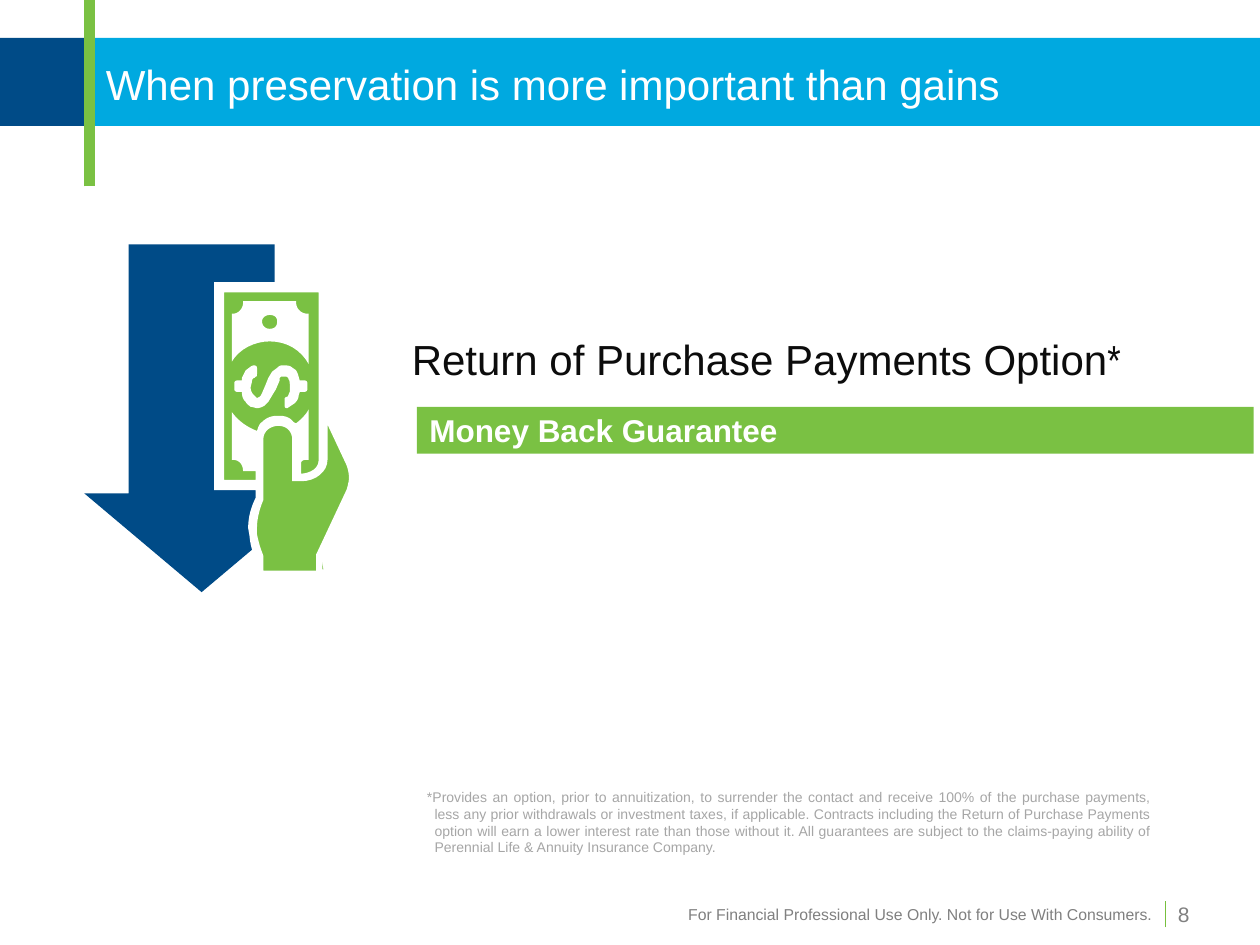
from dataclasses import dataclass
from typing import NamedTuple

from lxml import etree
from pptx import Presentation
from pptx.dml.color import RGBColor
from pptx.enum.shapes import MSO_CONNECTOR, MSO_SHAPE
from pptx.enum.text import MSO_ANCHOR, MSO_AUTO_SIZE, PP_ALIGN
from pptx.oxml.ns import qn
from pptx.util import Inches, Pt

RECT, ROUNDED, ARROW = MSO_SHAPE.RECTANGLE, MSO_SHAPE.ROUNDED_RECTANGLE, MSO_SHAPE.RIGHT_ARROW
STRAIGHT = MSO_CONNECTOR.STRAIGHT
TOP, MIDDLE, BOTTOM = MSO_ANCHOR.TOP, MSO_ANCHOR.MIDDLE, MSO_ANCHOR.BOTTOM
LEFT, RIGHT, JUSTIFY = PP_ALIGN.LEFT, PP_ALIGN.RIGHT, PP_ALIGN.JUSTIFY
NO_AUTOFIT = MSO_AUTO_SIZE.NONE
CURVE_STEPS = 8


@dataclass(frozen=True)
class Theme:
    sky: str = "00A9E0"
    navy: str = "004B87"
    green: str = "7AC143"
    divider: str = "77C03E"
    white: str = "FFFFFF"
    ink: str = "0C0C0C"
    grey: str = "808080"
    pale: str = "A6A6A6"
    font: str = "Arial"
    narrow: str = "Arial Narrow"
    heading: int = 24
    label: int = 18
    number: int = 12
    footer: int = 9
    note: int = 8


class Box(NamedTuple):
    left: float
    top: float
    width: float
    height: float


class Style(NamedTuple):
    size: int
    color: str
    anchor: MSO_ANCHOR = MIDDLE
    align: PP_ALIGN = LEFT
    bold: bool = False
    wrap: bool = True
    bottom: float = 0.05
    hanging: float = 0


class Rule(NamedTuple):
    x: float
    top: float
    bottom: float
    color: str
    weight: float


class Outline(NamedTuple):
    """Contours in hundredths of an inch: pairs are corners, sextets are Bezier curves."""
    color: str
    contours: list


THEME = Theme()

HAND_AND_BILL = Outline(THEME.green, [[
    (201, 229), (172, 228), (175, 386), (203, 385), (207, 393), (200, 412), (205, 440),
    (207, 449), (209, 463), (258, 459), (255, 443), (279, 383), (278, 371), (255, 326), (254, 228)]])

BILL_TOP = Outline(THEME.white, [
    [(214, 271), (228, 271, 239, 278, 245, 289), (245, 249), (244, 249),
     (239, 249, 235, 245, 235, 240), (235, 239), (193, 239), (193, 240),
     (193, 245, 189, 249, 185, 249), (184, 249), (184, 287), (190, 277, 202, 271, 214, 271)],
    [(214, 250), (218, 250, 220, 252, 220, 255), (220, 259, 218, 261, 214, 261),
     (211, 261, 208, 259, 208, 255), (208, 252, 211, 250, 214, 250)]])

DOLLAR = Outline(THEME.white, [[
    (242, 302), (238, 302), (237, 300, 237, 297, 235, 294), (234, 293, 232, 292, 231, 291),
    (229, 290, 227, 290, 225, 290), (223, 290, 222, 290, 220, 292), (216, 295), (213, 300),
    (211, 305), (208, 312), (207, 314), (206, 315), (204, 316), (203, 315), (201, 313),
    (200, 312, 199, 310, 199, 308), (199, 307), (200, 303), (200, 301, 201, 300, 202, 300),
    (203, 299), (204, 299, 204, 298, 204, 296), (204, 292), (204, 291, 203, 290, 202, 290),
    (202, 290, 200, 290, 199, 291), (195, 294), (192, 300), (192, 302), (188, 302),
    (187, 302, 186, 303, 186, 304), (186, 309), (186, 310, 187, 311, 188, 311), (192, 311),
    (192, 315, 193, 317, 195, 319), (196, 321, 198, 322, 199, 323),
    (201, 323, 203, 324, 204, 324), (206, 324, 208, 323, 210, 322), (213, 319), (216, 314),
    (219, 309), (222, 302), (222, 300), (223, 299), (225, 299), (227, 299),
    (228, 299, 229, 300, 229, 301), (230, 302, 230, 304, 230, 306), (230, 307), (230, 311),
    (229, 313, 229, 314, 228, 315), (227, 315), (226, 316), (226, 318), (226, 322),
    (226, 323, 226, 324, 228, 324), (231, 322), (234, 320), (236, 318, 237, 316, 237, 314),
    (238, 311), (242, 311), (243, 311, 244, 310, 244, 309), (244, 304),
    (244, 303, 243, 302, 242, 302)]])

WHITE_FRAME = Outline(THEME.white, [
    [(281, 391), (283, 388, 283, 383, 283, 379), (283, 372, 281, 367, 281, 366), (260, 321),
     (260, 224), (170, 224), (170, 389), (203, 389), (203, 395), (199, 403, 197, 411, 197, 419),
     (198, 425), (199, 436, 202, 442, 204, 445), (204, 452), (199, 452), (197, 454), (197, 468),
     (199, 470), (261, 470), (264, 468), (264, 454), (261, 452), (256, 452), (256, 444)],
    [(185, 365), (190, 365, 193, 369, 193, 374), (203, 374), (203, 381), (178, 381), (178, 232),
     (253, 232), (253, 365), (253, 375, 240, 376, 239, 376), (239, 367),
     (240, 365, 242, 365, 244, 365), (245, 365), (245, 325), (243, 329, 239, 333, 235, 336),
     (233, 335), (230, 331, 226, 330, 221, 330), (216, 330, 212, 331, 208, 335),
     (206, 336, 205, 339, 204, 342), (196, 339, 189, 334, 184, 327), (184, 365)],
    [(251, 440), (251, 453), (209, 453), (209, 441), (208, 438, 206, 434, 204, 424),
     (204, 419), (204, 412, 206, 404, 209, 397), (209, 349), (209, 342, 215, 338, 221, 338),
     (227, 338, 232, 342, 232, 349), (232, 382), (239, 382), (251, 382, 260, 374, 260, 365),
     (260, 337), (275, 369), (275, 369, 277, 374, 277, 379), (277, 382, 276, 386, 275, 389)]])


def flatten(contour: list) -> list:
    """Turn corners and curves into points in EMU."""
    points = [contour[0]]
    for node in contour[1:]:
        if len(node) == 2:
            points.append(node)
            continue
        controls = (points[-1], node[:2], node[2:4], node[4:])
        for step in range(1, CURVE_STEPS + 1):
            t = step / CURVE_STEPS
            weights = ((1 - t) ** 3, 3 * t * (1 - t) ** 2, 3 * t * t * (1 - t), t ** 3)
            points.append(tuple(sum(w * c[axis] for w, c in zip(weights, controls))
                                for axis in (0, 1)))
    return [(x * Inches(0.01), y * Inches(0.01)) for x, y in points]


def paint(shape, color: str | None) -> None:
    """Give a shape a flat fill, or none, without line and shadow."""
    shape.shadow.inherit = False
    shape.line.fill.background()
    if color:
        shape.fill.solid()
        shape.fill.fore_color.rgb = RGBColor.from_string(color)
    else:
        shape.fill.background()


def add_block(slide, kind: MSO_SHAPE, box: Box, color: str | None = None):
    """Add a flat preset shape."""
    block = slide.shapes.add_shape(kind, *map(Inches, box))
    paint(block, color)
    return block


def add_outline(slide, outline: Outline) -> None:
    """Add a freeform whose later contours are cut out of the first."""
    first, *holes = map(flatten, outline.contours)
    builder = slide.shapes.build_freeform(*first[0], scale=1.0)
    builder.add_line_segments(first[1:], close=True)
    for hole in holes:
        builder.move_to(*hole[0])
        builder.add_line_segments(hole[1:], close=True)
    paint(builder.convert_to_shape(), outline.color)


def add_rule(slide, rule: Rule) -> None:
    """Add a vertical line."""
    line = slide.shapes.add_connector(STRAIGHT, Inches(rule.x), Inches(rule.bottom),
                                      Inches(rule.x), Inches(rule.top))
    line.line.color.rgb = RGBColor.from_string(rule.color)
    line.line.width = Pt(rule.weight)
    etree.SubElement(line._element.spPr, qn("a:effectLst"))


def write(shape, text: str, style: Style):
    """Set one styled paragraph in a shape."""
    frame = shape.text_frame
    frame.auto_size, frame.word_wrap = NO_AUTOFIT, style.wrap
    frame.vertical_anchor, frame.margin_bottom = style.anchor, Inches(style.bottom)
    paragraph = frame.paragraphs[0]
    paragraph.text, paragraph.alignment = text, style.align
    if style.hanging:
        properties = paragraph._p.get_or_add_pPr()
        properties.set("marL", str(Inches(style.hanging)))
        properties.set("indent", str(-Inches(style.hanging)))
    font = paragraph.font
    font.name, font.size, font.bold = THEME.font, Pt(style.size), style.bold
    font.color.rgb = RGBColor.from_string(style.color)
    return paragraph


def add_text(slide, box: Box, text: str, style: Style) -> None:
    """Add a text box."""
    write(slide.shapes.add_textbox(*map(Inches, box)), text, style)


def main() -> None:
    """Build the slide and save it."""
    deck = Presentation()
    deck.slide_width, deck.slide_height = Inches(10), Inches(7.5)
    slide = deck.slides.add_slide(deck.slide_layouts[5])

    add_block(slide, RECT, Box(0.72, 0.3, 9.28, 0.7), THEME.sky)
    add_block(slide, RECT, Box(0, 0.3, 0.72, 0.7), THEME.navy)
    add_rule(slide, Rule(0.71, 0, 1.48, THEME.green, 6))
    add_text(slide, Box(2.83, 7.13, 6.41, 0.2),
             "For Financial Professional Use Only. Not for Use With Consumers.",
             Style(THEME.footer, THEME.grey, BOTTOM, RIGHT, bottom=0))
    add_text(slide, Box(9.25, 7.11, 0.41, 0.3), "8",
             Style(THEME.number, THEME.grey, TOP, wrap=False))
    add_rule(slide, Rule(9.25, 7.15, 7.36, THEME.divider, 0.75))
    add_text(slide, Box(3.29, 6.2, 5.95, 0.64),
             "*Provides an option, prior to annuitization, to surrender the contact and receive 100% "
             "of the purchase payments, less any prior withdrawals or investment taxes, if applicable. "
             "Contracts including the Return of Purchase Payments option will earn a lower interest "
             "rate than those without it. All guarantees are subject to the claims-paying ability of "
             "Perennial Life & Annuity Insurance Company.",
             Style(THEME.note, THEME.pale, BOTTOM, JUSTIFY, hanging=0.06))

    guarantee = add_block(slide, RECT, Box(3.31, 3.23, 6.64, 0.37), THEME.green)
    write(guarantee, "Money Back Guarantee", Style(THEME.label, THEME.white, bold=True))
    option = add_block(slide, ROUNDED, Box(3.17, 2.23, 5.83, 1.23))
    option.adjustments[0] = 0
    option_name = write(option, "Return of Purchase Payments Option",
                        Style(THEME.heading, THEME.ink))
    asterisk = option_name.add_run()
    asterisk.text, asterisk.font.name = "*", THEME.narrow

    decline = add_block(slide, ARROW, Box(0.22, 2.39, 2.76, 1.86), THEME.navy)
    decline.rotation = 90
    decline.adjustments[0], decline.adjustments[1] = 0.622, 0.421
    for outline in (HAND_AND_BILL, BILL_TOP, DOLLAR, WHITE_FRAME):
        add_outline(slide, outline)

    title = slide.shapes.title
    title.left, title.top, title.width, title.height = map(Inches, Box(0.74, 0.28, 8.99, 0.77))
    write(title, "When preservation is more important than gains",
          Style(THEME.heading, THEME.white))
    slide.shapes._spTree.append(title._element)
    deck.save("out.pptx")


if __name__ == "__main__":
    main()
